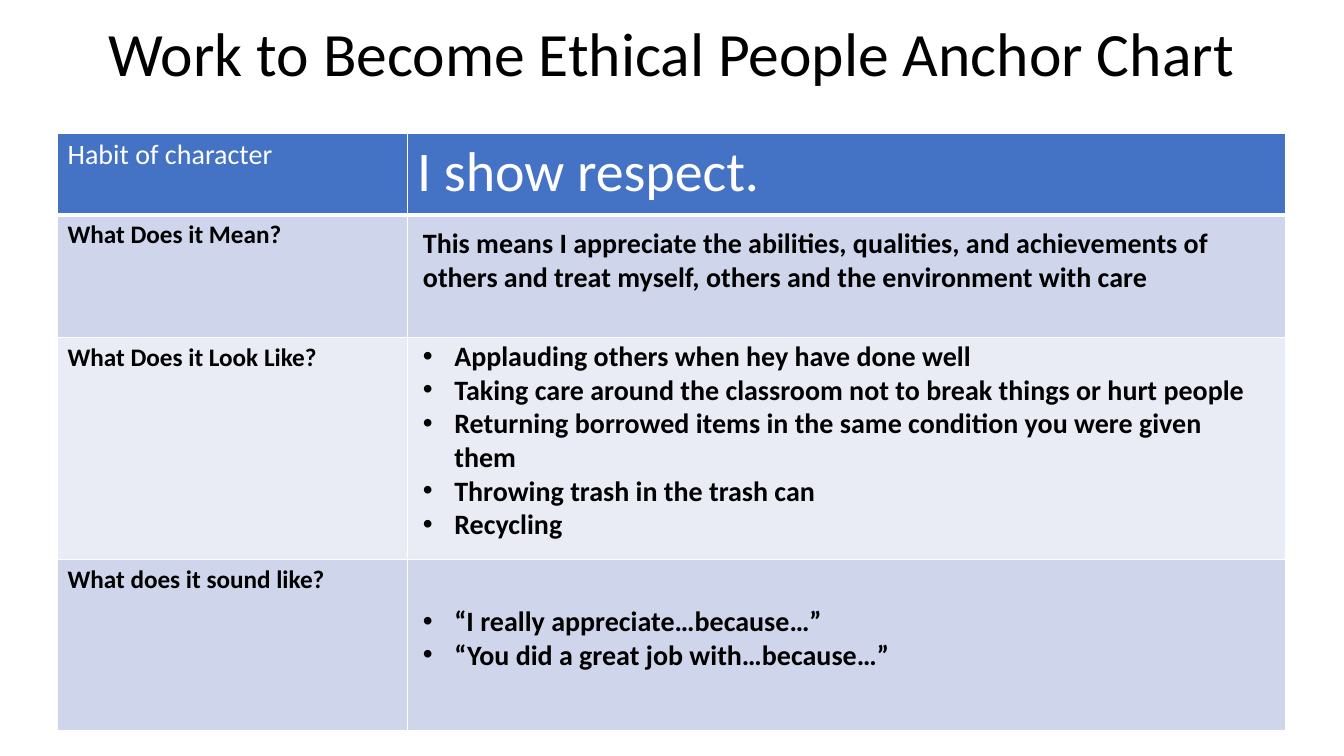
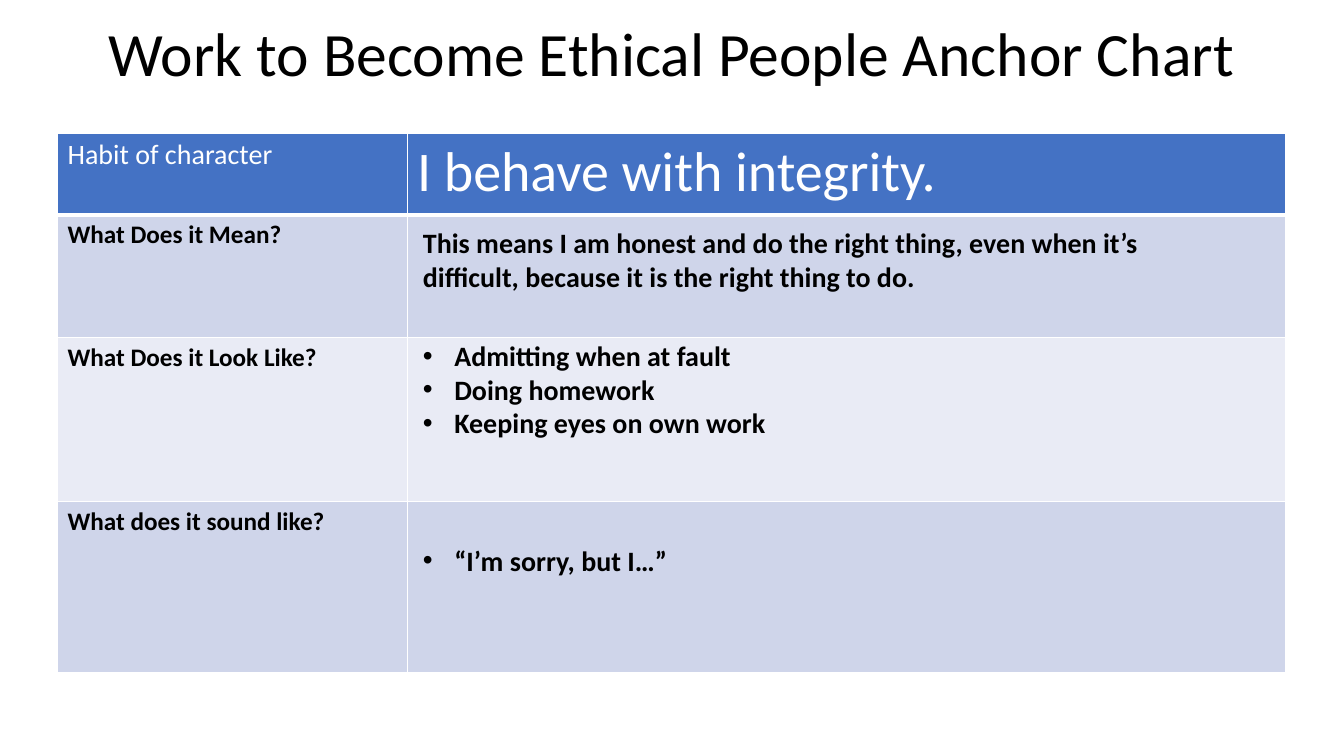
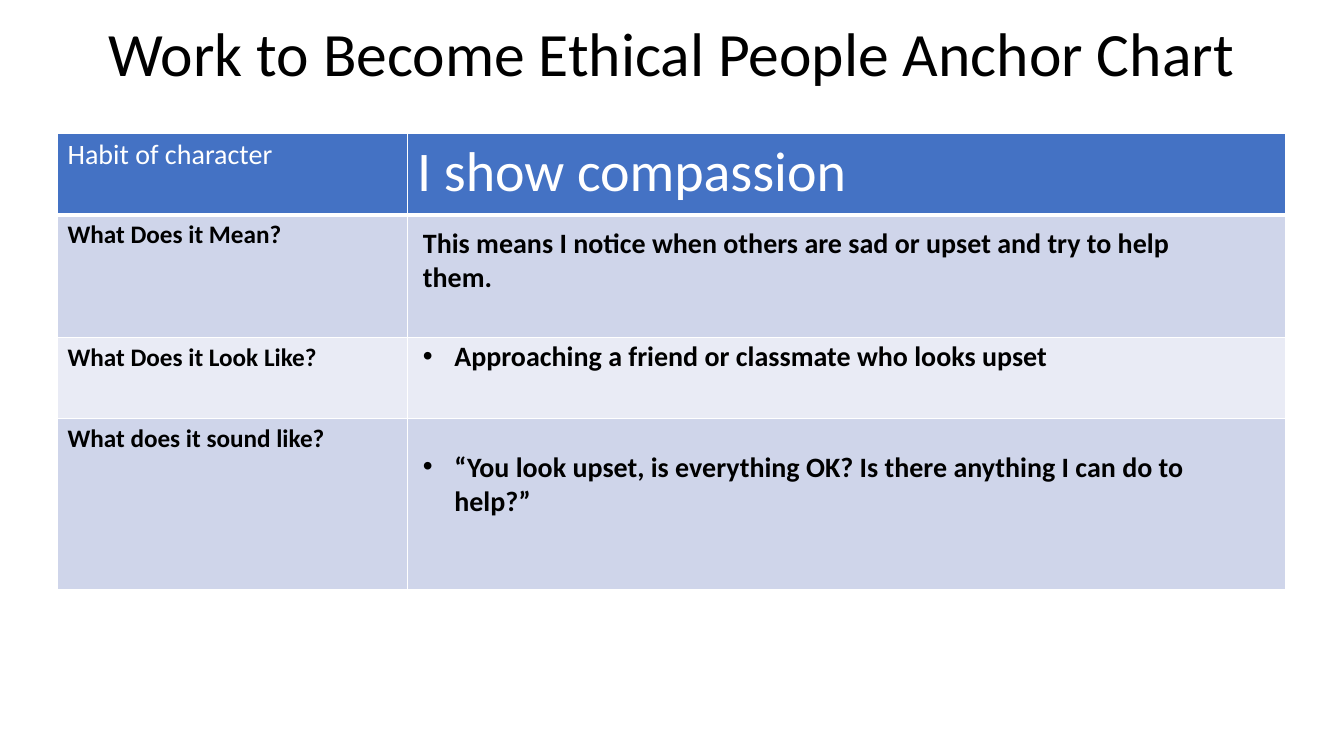
import dataclasses

import pptx
import pptx.dml.color
import pptx.enum.text
import pptx.oxml
import pptx.oxml.ns
import pptx.util

Cm = pptx.util.Cm
Pt = pptx.util.Pt


@dataclasses.dataclass(frozen=True)
class Theme:
    font: str = "Calibri"
    ink: str = "000000"
    pale: str = "FFFFFF"
    head: str = "4472C4"
    bands: tuple = ("CFD5EA", "E9EBF5")
    title: int = 44
    habit: int = 40
    body: int = 20
    label: int = 18


@dataclasses.dataclass(frozen=True)
class Note:
    texts: tuple
    lines: int  # lines once wrapped
    drop: float  # from the top of its row
    width: float = 21.21


@dataclasses.dataclass(frozen=True)
class Habit:
    name: str
    look: float  # height of the "look like" row
    notes: tuple


THEME = Theme()
TITLE = "Work to Become Ethical People Anchor Chart"
LABELS = ("Habit of character", "What Does it Mean?",
          "What Does it Look Like?", "What does it sound like?")
TITLE_BOX = (2.34, 0.2, 29.2, 2.44)
LEFT, TOP = 1.45, 3.35
COLS = (8.81, 22.14)
HEAD, MEAN, SOUND = 2.06, 3.1, 4.32
INSET, LINE, PAD, INDENT = 0.15, 0.85, 0.26, 0.79


def mean(text):
    return Note((text,), 2, 0.15, 21.03)


def look(lines, *texts):
    return Note(texts, lines, -0.1)


def sound(lines, drop, *texts):
    return Note(texts, lines, drop)


HABITS = (
    Habit("I show respect.", 5.59, (
        mean("This means I appreciate the abilities, qualities, and "
             "achievements of others and treat myself, others and the "
             "environment with care"),
        look(6, "Applauding others when hey have done well",
             "Taking care around the classroom not to break things or hurt people",
             "Returning borrowed items in the same condition you were given them",
             "Throwing trash in the trash can",
             "Recycling"),
        sound(2, 0.99, "“I really appreciate…because…”",
              "“You did a great job with…because…”"))),
    Habit("I behave with integrity.", 4.13, (
        mean("This means I am honest and do the right thing, even when it’s "
             "difficult, because it is the right thing to do."),
        look(3, "Admitting when at fault", "Doing homework",
             "Keeping eyes on own work"),
        sound(1, 0.92, "“I’m sorry, but I…”"))),
    Habit("I show compassion", 2.03, (
        mean("This means I notice when others are sad or upset and try to "
             "help them."),
        look(1, "Approaching a friend or classmate who looks upset"),
        sound(2, 0.66, "“You look upset, is everything OK? Is there anything "
                       "I can do to help?”"))),
)


def color(code):
    return pptx.dml.color.RGBColor.from_string(code)


def style(para, size, ink, bold=False):
    font = para.font
    font.name, font.size, font.bold = THEME.font, Pt(size), bold
    font.color.rgb = color(ink)


def bullet(para):
    props = para._p.get_or_add_pPr()
    props.set("marL", str(Cm(INDENT)))
    props.set("indent", str(-Cm(INDENT)))
    space = pptx.oxml.ns.nsdecls("a")
    props.append(pptx.oxml.parse_xml(f'<a:buFont {space} typeface="Arial"/>'))
    props.append(pptx.oxml.parse_xml(f'<a:buChar {space} char="•"/>'))


def border(cell, base):
    """White rules on all four sides; base is the width of the lower one."""
    props = cell._tc.get_or_add_tcPr()
    space = pptx.oxml.ns.nsdecls("a")
    for side, width in (("L", 1), ("R", 1), ("T", 1), ("B", base)):
        props.append(pptx.oxml.parse_xml(
            f'<a:ln{side} {space} w="{Pt(width)}"><a:solidFill>'
            f'<a:srgbClr val="{THEME.pale}"/></a:solidFill></a:ln{side}>'))


def add_title(slide, box):
    title = slide.shapes.title
    title.left, title.top, title.width, title.height = map(Cm, box)
    frame = title.text_frame
    frame.text = TITLE
    frame.vertical_anchor = pptx.enum.text.MSO_ANCHOR.MIDDLE
    para = frame.paragraphs[0]
    para.alignment = pptx.enum.text.PP_ALIGN.CENTER
    para.line_spacing = 0.9
    style(para, THEME.title, THEME.ink)


def add_grid(slide, left, top, rows, name):
    grid = slide.shapes.add_table(
        len(rows), len(COLS), Cm(left), Cm(top),
        Cm(sum(COLS)), Cm(sum(rows))).table
    for col, width in zip(grid.columns, COLS):
        col.width = Cm(width)
    for r, height in enumerate(rows):
        grid.rows[r].height = Cm(height)
        for cell in grid.rows[r].cells:
            border(cell, 1 if r else 3)
            cell.fill.solid()
            cell.fill.fore_color.rgb = color(
                THEME.bands[(r - 1) % 2] if r else THEME.head)
        label = grid.cell(r, 0)
        label.text = LABELS[r]
        para = label.text_frame.paragraphs[0]
        if r:
            style(para, THEME.label, THEME.ink, True)
        else:
            style(para, THEME.body, THEME.pale)
    cell = grid.cell(0, 1)
    cell.text = name
    style(cell.text_frame.paragraphs[0], THEME.habit, THEME.pale)


def add_note(slide, left, top, note, marked):
    box = slide.shapes.add_textbox(
        Cm(left + INSET), Cm(top + note.drop),
        Cm(note.width), Cm(note.lines * LINE + PAD))
    frame = box.text_frame
    frame.word_wrap = True
    frame.auto_size = pptx.enum.text.MSO_AUTO_SIZE.SHAPE_TO_FIT_TEXT
    for n, text in enumerate(note.texts):
        para = frame.add_paragraph() if n else frame.paragraphs[0]
        para.text = text
        if marked:
            bullet(para)
        style(para, THEME.body, THEME.ink, True)


def add_chart(deck, habit):
    slide = deck.slides.add_slide(deck.slide_layouts[5])
    add_title(slide, TITLE_BOX)
    rows = (HEAD, MEAN, habit.look, SOUND)
    add_grid(slide, LEFT, TOP, rows, habit.name)
    # One note over each row below the header
    for r, note in enumerate(habit.notes, 1):
        add_note(slide, LEFT + COLS[0], TOP + sum(rows[:r]), note, r > 1)


def main():
    deck = pptx.Presentation()
    deck.slide_width, deck.slide_height = Cm(33.87), Cm(19.05)
    for habit in HABITS:
        add_chart(deck, habit)
    deck.save("out.pptx")


if __name__ == "__main__":
    main()
